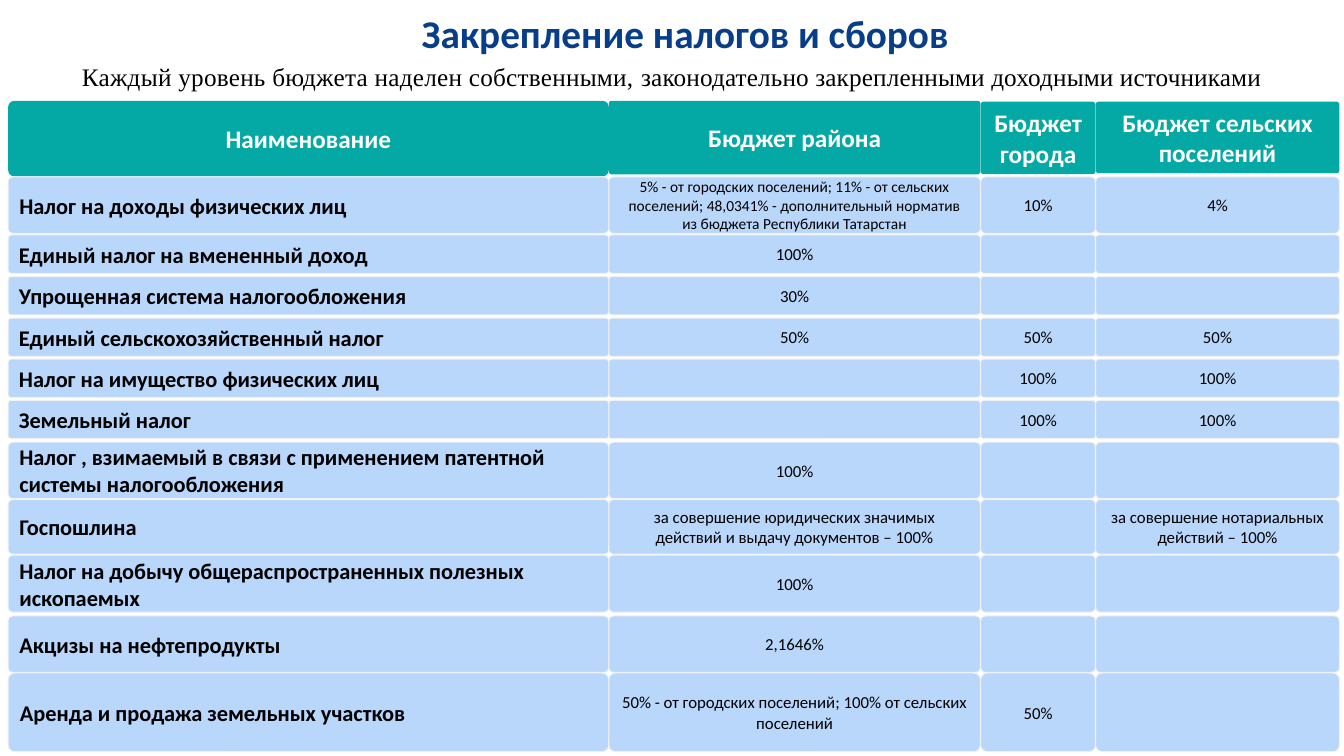
from dataclasses import dataclass

from pptx import Presentation
from pptx.dml.color import RGBColor
from pptx.enum.shapes import MSO_SHAPE
from pptx.enum.text import MSO_ANCHOR, MSO_AUTO_SIZE, PP_ALIGN
from pptx.util import Pt


@dataclass(frozen=True)
class Theme:
    navy: str = "073E87"
    teal: str = "04A8A4"
    sky: str = "B9D6FB"
    edge: str = "F2F2F2"
    white: str = "FFFFFF"
    black: str = "000000"
    sans: str = "Calibri"
    serif: str = "Times New Roman"
    title: float = 28
    head: float = 18
    name: float = 16
    value: float = 12
    small: float = 11


class Board:
    def __init__(self, slide, theme):
        self.slide = slide
        self.theme = theme

    def style(self, run, size, color, bold=False, face=None):
        font = run.font
        font.name = face or self.theme.sans
        font.size = Pt(size)
        font.bold = bold
        font.color.rgb = RGBColor.from_string(color)

    def label(self, box, parts, size, color, bold=False, face=None, wrap=True):
        """Centred line of text; parts are (text, spacing in 1/100 pt)."""
        area = self.slide.shapes.add_textbox(*map(Pt, box))
        frame = area.text_frame
        frame.word_wrap = wrap
        frame.auto_size = MSO_AUTO_SIZE.SHAPE_TO_FIT_TEXT
        line = frame.paragraphs[0]
        line.alignment = PP_ALIGN.CENTER
        for text, gap in parts:
            run = line.add_run()
            run.text = text
            self.style(run, size, color, bold, face)
            if gap:
                run.font._element.set("spc", str(gap))

    def cell(self, box, text, size, fill, color, bold=False, edge=None,
             bend=0.083, align=PP_ALIGN.CENTER, after=10):
        """Rounded box with text in its middle."""
        shape = self.slide.shapes.add_shape(MSO_SHAPE.ROUNDED_RECTANGLE, *map(Pt, box))
        shape.shadow.inherit = False
        shape.adjustments[0] = bend
        shape.fill.solid()
        shape.fill.fore_color.rgb = RGBColor.from_string(fill)
        if edge:
            shape.line.color.rgb = RGBColor.from_string(edge)
            shape.line.width = Pt(0.75)
        else:
            shape.line.fill.background()
        if not text:
            return
        frame = shape.text_frame
        frame.word_wrap = True
        frame.vertical_anchor = MSO_ANCHOR.MIDDLE
        frame.text = text
        line = frame.paragraphs[0]
        line.alignment = align
        line.space_after = Pt(after)
        self.style(line.runs[0], size, color, bold)


# Columns: left, width, header top, header height, header corner, header text
COLS = [
    (5.8, 429.1, 72, 54, 0.083, "Наименование"),
    (434.9, 265.5, 72, 52.6, 0.04, "Бюджет района"),
    (700.5, 82, 72.6, 51.8, 0.04, "Бюджет города"),
    (782.6, 174.2, 72.6, 51.1, 0.04, "Бюджет сельских поселений"),
]

# Rows: top, height, then the tax and its share in each budget
ROWS = [
    (126.4, 40.3, "Налог на доходы физических лиц",
     "5% - от городских поселений; 11% - от сельских поселений; "
     "48,0341% - дополнительный норматив из бюджета Республики Татарстан",
     "10%", "4%"),
    (167.8, 27.4, "Единый налог на вмененный доход", "100%", "", ""),
    (197.5, 27.4, "Упрощенная система налогообложения", "30%", "", ""),
    (227.2, 27.4, "Единый сельскохозяйственный налог", "50%", "50%", "50%"),
    (256.5, 27.4, "Налог на имущество физических лиц", "", "100%", "100%"),
    (286, 27.4, "Земельный налог", "", "100%", "100%"),
    (315.9, 40.3, "Налог , взимаемый в связи с применением патентной "
     "системы налогообложения", "100%", "", ""),
    (356.9, 38.9, "Госпошлина",
     "за совершение юридических значимых действий и выдачу документов – 100%",
     "", "за совершение нотариальных действий – 100%"),
    (396.5, 40.8, "Налог на добычу общераспространенных полезных ископаемых",
     "100%", "", ""),
    (440, 40.3, "Акцизы на нефтепродукты", "2,1646%", "", ""),
    (480.7, 56.2, "Аренда и продажа земельных участков",
     "50% - от городских поселений; 100% от сельских поселений", "50%", ""),
]


def main():
    deck = Presentation()
    deck.slide_width, deck.slide_height = Pt(960), Pt(540)
    theme = Theme()
    board = Board(deck.slides.add_slide(deck.slide_layouts[6]), theme)

    # Title and subtitle
    board.label((291.6, 2.9, 395.3, 41), [("Закрепление налогов и сборов", 0)],
                theme.title, theme.navy, bold=True, wrap=False)
    board.label((20.9, 40.3, 918, 28.8),
                [("Каждый уровень бюджета наделен собственными, ", 20),
                 ("законодательно закрепленными доходными источниками", 10)],
                theme.head, theme.black, face=theme.serif)

    # Header row
    for left, width, top, height, bend, text in COLS:
        board.cell((left, top, width, height), text, theme.head,
                   theme.teal, theme.white, bold=True, bend=bend)

    # Tax rows
    for top, height, *texts in ROWS:
        for col, text in enumerate(texts):
            left, width = COLS[col][:2]
            first = col == 0
            size = theme.small if len(text) > 100 else theme.value
            board.cell((left, top, width, height), text,
                       theme.name if first else size,
                       theme.sky, theme.black, bold=first, edge=theme.edge,
                       align=PP_ALIGN.LEFT if first else PP_ALIGN.CENTER,
                       after=0 if col == 3 else 10)

    deck.save("out.pptx")


if __name__ == "__main__":
    main()
